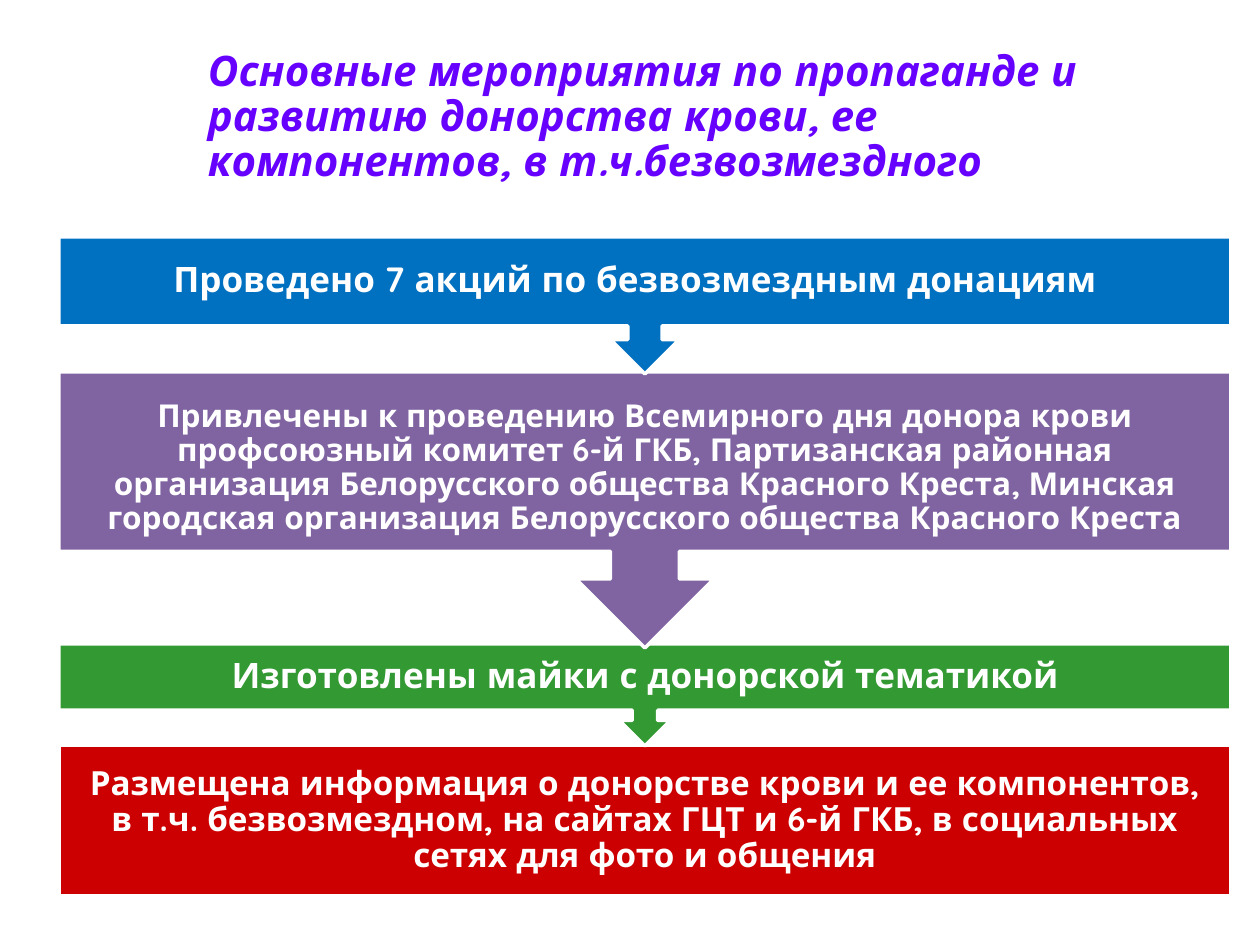
from dataclasses import dataclass

from pptx import Presentation
from pptx.dml.color import RGBColor
from pptx.enum import shapes, text
from pptx.util import Emu, Pt

EMU_PER_PX = 914400 / 126


@dataclass(frozen=True)
class Theme:
    font: str = "Quicksand"
    title: str = "6600FF"
    white: str = "FFFFFF"
    blue: str = "0070C0"
    purple: str = "8064A2"
    green: str = "339933"
    red: str = "CC0000"
    title_size: int = 24
    large: int = 20
    medium: int = 19
    small: int = 18


THEME = Theme()
STEP_LEFT, STEP_WIDTH = 59, 1172


def px(n):
    return Emu(round(n * EMU_PER_PX))


def place(sp, left, top, width, height):
    sp.left, sp.top, sp.width, sp.height = map(px, (left, top, width, height))


def write(sp, words, *, size, color, align, insets, italic=False):
    """Fill a shape with one bold paragraph; insets are left, top, right, bottom."""
    tf = sp.text_frame
    tf.word_wrap = True
    tf.auto_size = text.MSO_AUTO_SIZE.NONE
    tf.vertical_anchor = text.MSO_ANCHOR.MIDDLE
    tf.margin_left, tf.margin_top, tf.margin_right, tf.margin_bottom = map(px, insets)
    p = tf.paragraphs[0]
    p.alignment = align
    p.line_spacing = 0.9
    r = p.add_run()
    r.text = words
    r.font.name = THEME.font
    r.font.size = Pt(size)
    r.font.bold = True
    r.font.italic = italic
    r.font.color.rgb = RGBColor.from_string(color)


def add_title(s, words):
    sp = s.shapes.title
    place(sp, 186, 29, 1014, 178)
    write(sp, words, size=THEME.title_size, color=THEME.title, italic=True,
          align=text.PP_ALIGN.LEFT, insets=(22, 13, 22, 13))


def add_step(s, kind, top, height, color, words, size, insets):
    sp = s.shapes.add_shape(kind, 0, 0, 0, 0)
    place(sp, STEP_LEFT, top, STEP_WIDTH, height)
    sp.shadow.inherit = False
    sp.fill.solid()
    sp.fill.fore_color.rgb = RGBColor.from_string(color)
    sp.line.color.rgb = RGBColor.from_string(THEME.white)
    sp.line.width = Pt(2)
    write(sp, words, size=size, color=THEME.white,
          align=text.PP_ALIGN.CENTER, insets=insets)


def main():
    prs = Presentation()
    prs.slide_width, prs.slide_height = px(1260), px(945)
    s = prs.slides.add_slide(prs.slide_layouts[5])

    add_title(s, "Основные мероприятия по пропаганде и развитию донорства крови, "
                 "ее компонентов, в т.ч.безвозмездного")

    # Steps from top to bottom: shape, top, height, colour, text, size, insets
    arrow = shapes.MSO_SHAPE.DOWN_ARROW_CALLOUT
    box = shapes.MSO_SHAPE.RECTANGLE
    steps = [
        (arrow, 237, 137, THEME.blue,
         "Проведено 7 акций по безвозмездным донациям",
         THEME.large, (20, 20, 40, 20)),
        (arrow, 372, 276, THEME.purple,
         "Привлечены к проведению Всемирного дня донора крови профсоюзный "
         "комитет 6-й ГКБ, Партизанская районная организация Белорусского "
         "общества Красного Креста, Минская городская организация "
         "Белорусского общества Красного Креста",
         THEME.small, (16, 26, 16, 12)),
        (arrow, 644, 102, THEME.green,
         "Изготовлены майки с донорской тематикой",
         THEME.large, (20, 10, 20, 10)),
        (box, 745, 151, THEME.red,
         "Размещена информация о донорстве крови и ее компонентов, в т.ч. "
         "безвозмездном, на сайтах ГЦТ и 6-й ГКБ, в социальных сетях "
         "для фото и общения",
         THEME.medium, (19, 19, 19, 19)),
    ]

    # Each arrow tip lies over the step below it, so the lowest goes first
    for step in reversed(steps):
        add_step(s, *step)

    prs.save("out.pptx")


if __name__ == "__main__":
    main()
